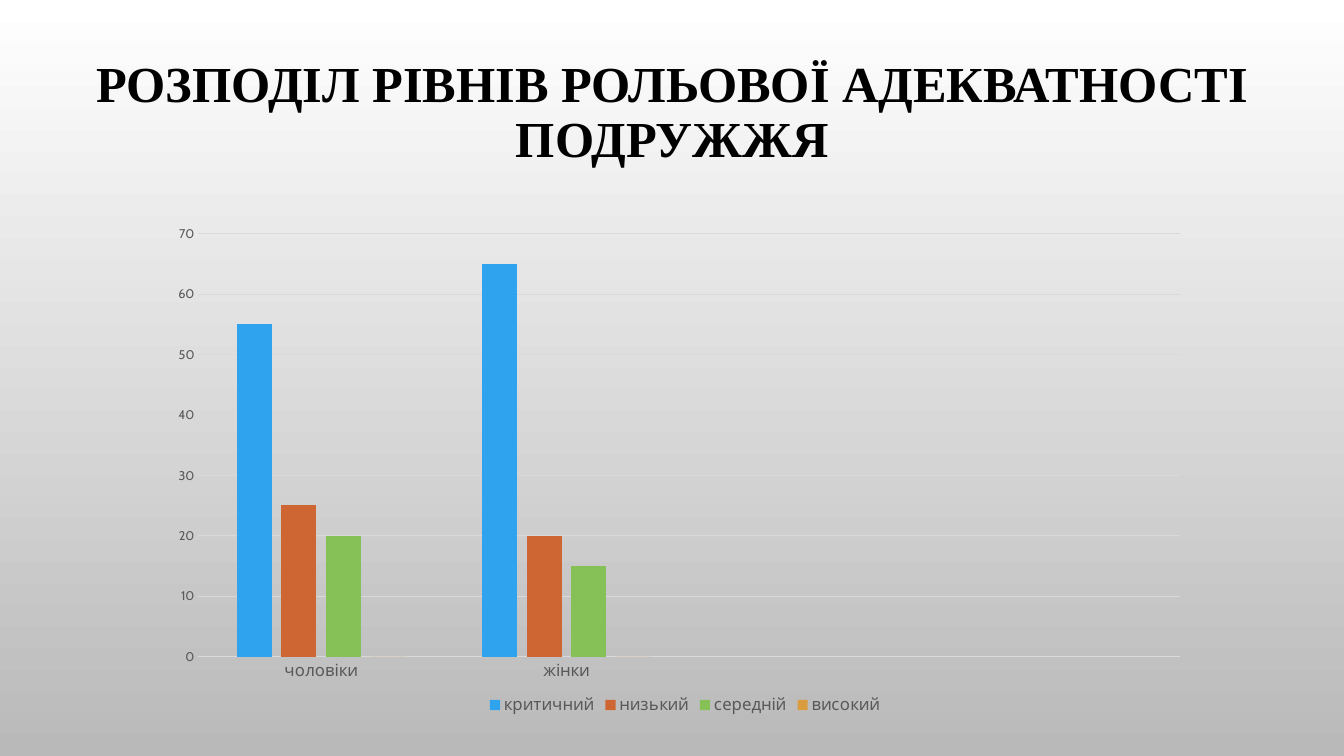
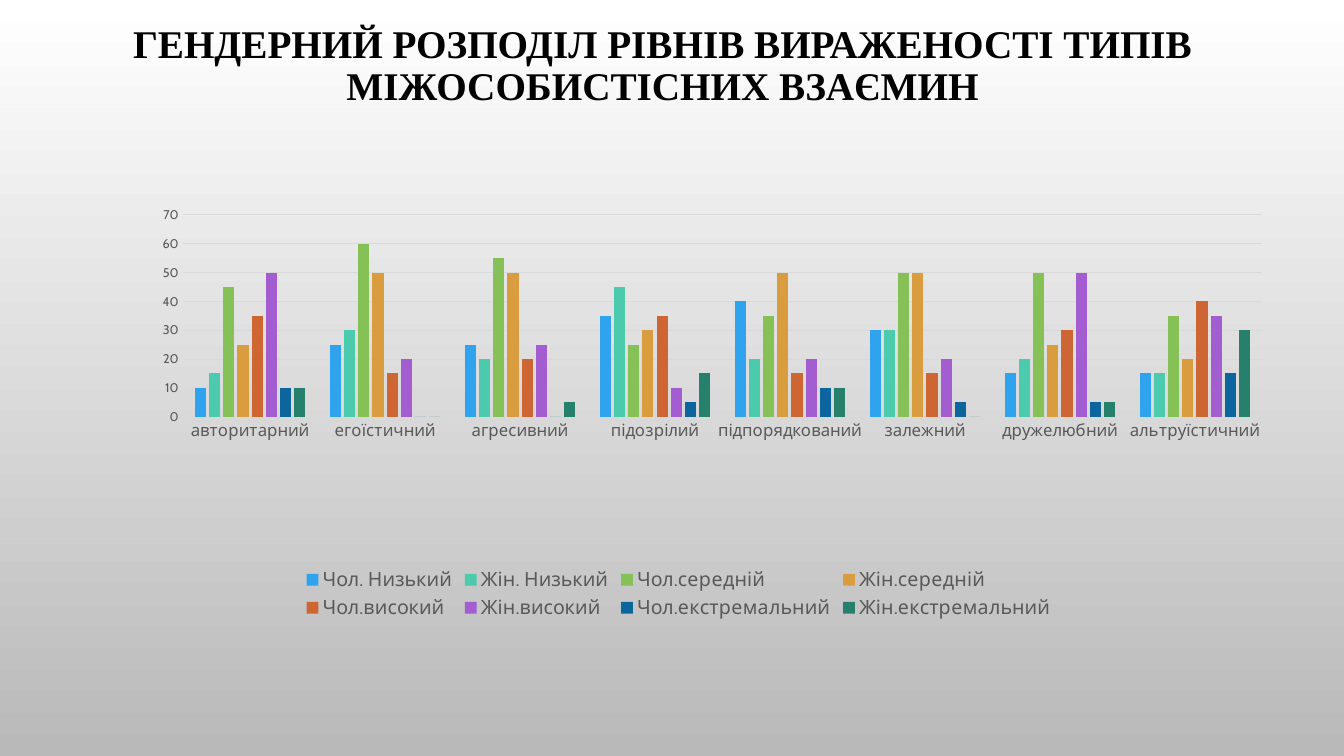
from lxml import etree
from pptx import Presentation
from pptx import util as u
from pptx.chart.data import CategoryChartData
from pptx.dml.color import RGBColor
from pptx.enum import chart as chart_enum
from pptx.enum import text
from pptx.oxml.ns import qn

SCALE = 914400 / 100.8  # EMU in one px
BLACK, GREY, RULE = "000000", "595959", "D9D9D9"
BLUE, RUST, GREEN, AMBER = "2FA3EE", "CE6633", "86C157", "D99C3F"
TEAL, VIOLET, NAVY, PINE = "4BCAAD", "A35DD1", "0D659E", "26806C"


def px(*lengths):
    return [u.Emu(round(length * SCALE)) for length in lengths]


def style_font(font, size, color, name="Cabin"):
    font.size = u.Pt(size)
    font.name = name
    font.color.rgb = RGBColor.from_string(color)


# plot: left, top, width and height of the plot area as shares of the chart
slides = [
    {
        "title": "РОЗПОДІЛ РІВНІВ РОЛЬОВОЇ АДЕКВАТНОСТІ ПОДРУЖЖЯ",
        "title_box": (84, 77, 1177, 156),
        "title_size": 36,
        "title_bottom": 65,
        "chart_box": (148, 195, 1074, 524),
        "plot": (0.047, 0.074, 0.914, 0.807),
        "legend_size": 12,
        "categories": ["чоловіки", "жінки", "", ""],
        "series": [
            ("критичний", BLUE, (55, 65, None, None)),
            ("низький", RUST, (25, 20, None, None)),
            ("середній", GREEN, (20, 15, None, None)),
            ("високий", AMBER, (0, 0, None, None)),
        ],
    },
    {
        "title": "ГЕНДЕРНИЙ РОЗПОДІЛ РІВНІВ ВИРАЖЕНОСТІ ТИПІВ МІЖОСОБИСТІСНИХ ВЗАЄМИН",
        "title_box": (91, 12, 1143, 148),
        "title_size": 28,
        "title_bottom": 51,
        "chart_box": (91, 186, 1175, 438),
        "plot": (0.078, 0.066, 0.919, 0.461),
        "legend_size": 14,
        "categories": ["авторитарний", "егоїстичний", "агресивний", "підозрілий",
                       "підпорядкований", "залежний", "дружелюбний", "альтруїстичний"],
        "series": [
            ("Чол. Низький", BLUE, (10, 25, 25, 35, 40, 30, 15, 15)),
            ("Жін. Низький", TEAL, (15, 30, 20, 45, 20, 30, 20, 15)),
            ("Чол.середній", GREEN, (45, 60, 55, 25, 35, 50, 50, 35)),
            ("Жін.середній", AMBER, (25, 50, 50, 30, 50, 50, 25, 20)),
            ("Чол.високий", RUST, (35, 15, 20, 35, 15, 15, 30, 40)),
            ("Жін.високий", VIOLET, (50, 20, 25, 10, 20, 20, 50, 35)),
            ("Чол.екстремальний", NAVY, (10, 0, 0, 5, 10, 5, 5, 15)),
            ("Жін.екстремальний", PINE, (10, 0, 5, 15, 10, 0, 5, 30)),
        ],
    },
]

presentation = Presentation()
presentation.slide_width, presentation.slide_height = px(1344, 756)

background = presentation.slide_master.background.fill
background.gradient()
background.gradient_angle = 270
for stop, color in zip(background.gradient_stops, ("FFFFFF", "B9B9B9")):
    stop.color.rgb = RGBColor.from_string(color)

for content in slides:
    slide = presentation.slides.add_slide(presentation.slide_layouts[5])

    title = slide.shapes.title
    title.left, title.top, title.width, title.height = px(*content["title_box"])
    frame = title.text_frame
    frame.word_wrap = True
    frame.auto_size = text.MSO_AUTO_SIZE.NONE
    frame.vertical_anchor = text.MSO_ANCHOR.BOTTOM
    frame.margin_bottom = px(content["title_bottom"])[0]
    paragraph = frame.paragraphs[0]
    paragraph.alignment = text.PP_ALIGN.CENTER
    paragraph.line_spacing = 0.9
    run = paragraph.add_run()
    run.text = content["title"]
    run.font.bold = True
    style_font(run.font, content["title_size"], BLACK, "Times New Roman")

    data = CategoryChartData()
    data.categories = content["categories"]
    for name, color, values in content["series"]:
        data.add_series(name, values)
    chart = slide.shapes.add_chart(
        chart_enum.XL_CHART_TYPE.COLUMN_CLUSTERED, *px(*content["chart_box"]), data).chart
    chart.has_title = False
    style_font(chart.font, 10, BLACK)

    plot = chart.plots[0]
    plot.gap_width = 219
    plot.overlap = -27
    plot.vary_by_categories = False
    for series, (name, color, values) in zip(plot.series, content["series"]):
        series.format.fill.solid()
        series.format.fill.fore_color.rgb = RGBColor.from_string(color)

    category_axis, value_axis = chart.category_axis, chart.value_axis
    for axis, size in ((category_axis, 12), (value_axis, 9)):
        axis.major_tick_mark = chart_enum.XL_TICK_MARK.NONE
        style_font(axis.tick_labels.font, size, GREY)
    value_axis.minimum_scale, value_axis.maximum_scale = 0, 70
    value_axis.major_unit = 10
    value_axis.format.line.fill.background()
    for rule in (category_axis.format.line, value_axis.major_gridlines.format.line):
        rule.color.rgb = RGBColor.from_string(RULE)
        rule.width = u.Pt(0.75)

    chart.has_legend = True
    chart.legend.position = chart_enum.XL_LEGEND_POSITION.BOTTOM
    chart.legend.include_in_layout = False
    style_font(chart.legend.font, content["legend_size"], GREY)

    plot_area = chart.element.find(".//" + qn("c:plotArea"))
    layout = plot_area.find(qn("c:layout"))
    if layout is None:
        layout = etree.Element(qn("c:layout"))
        plot_area.insert(0, layout)
    manual = etree.SubElement(layout, qn("c:manualLayout"))
    settings = [("layoutTarget", "inner"), ("xMode", "edge"), ("yMode", "edge")]
    settings += zip("xywh", content["plot"])
    for tag, value in settings:
        etree.SubElement(manual, qn("c:" + tag)).set("val", str(value))

presentation.save("out.pptx")
